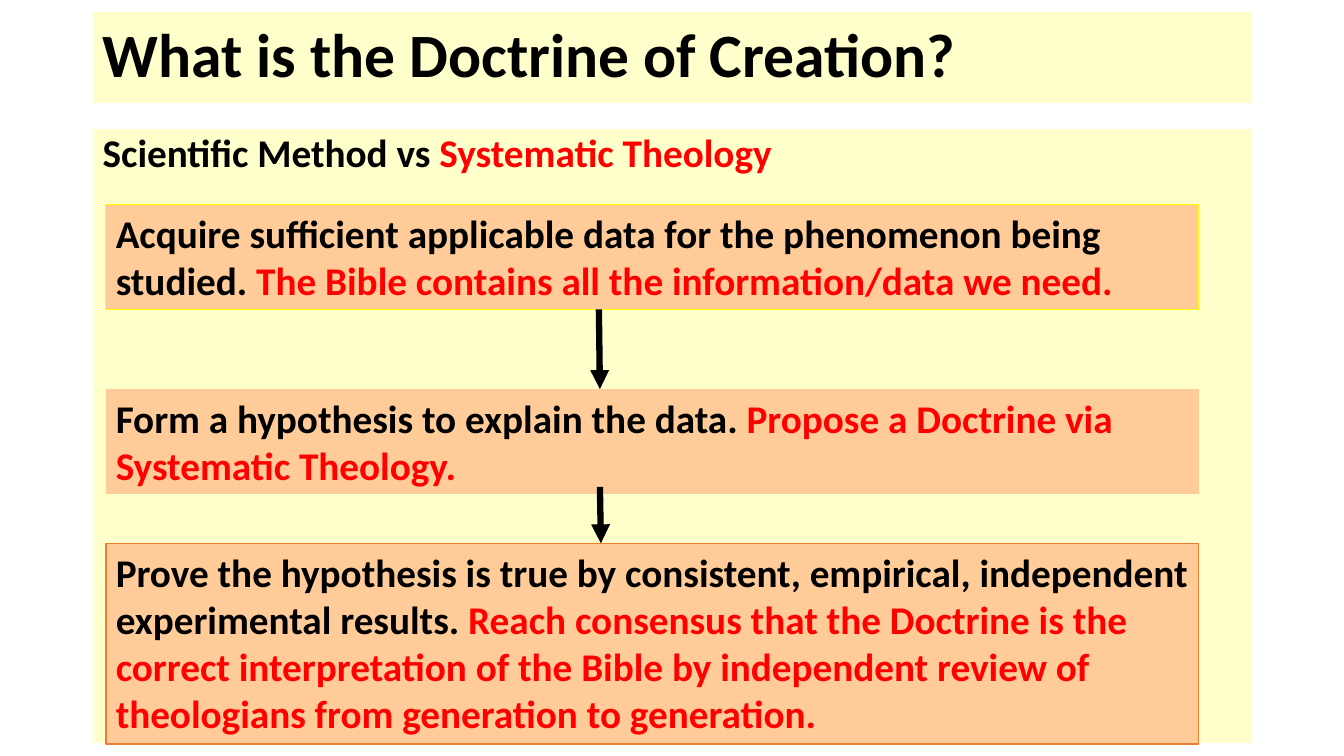
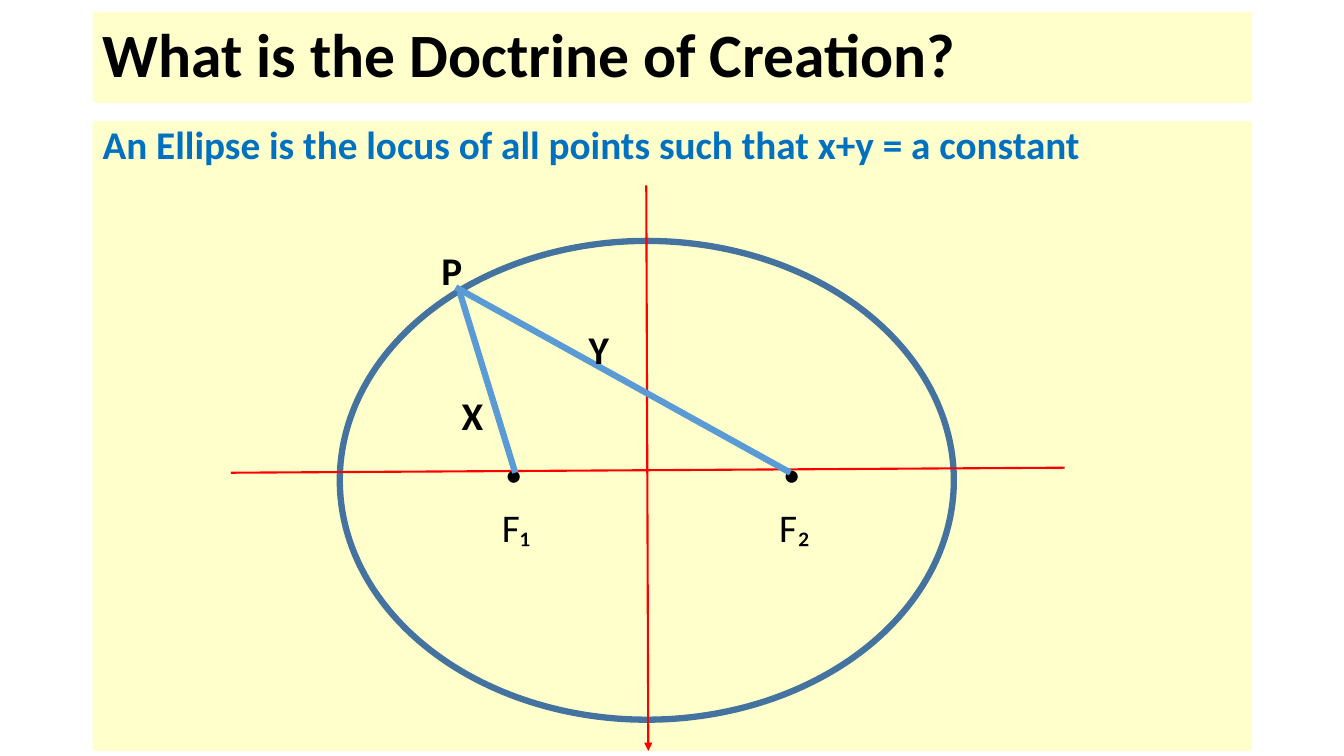
"""Build two slides on the doctrine of creation: a method flow and an ellipse."""
import lxml.etree
import pptx
import pptx.dml.color
import pptx.enum.shapes
import pptx.enum.text
import pptx.oxml.ns
import pptx.util

Inches = pptx.util.Inches
Pt = pptx.util.Pt
color = pptx.dml.color.RGBColor.from_string
qn = pptx.oxml.ns.qn
Shape = pptx.enum.shapes.MSO_SHAPE
Anchor = pptx.enum.text.MSO_ANCHOR

BLACK, RED, BLUE = "000000", "FF0000", "0070C0"
CREAM, PEACH, YELLOW, ORANGE = "FFFFCC", "FFCC99", "FFFF00", "ED7D31"
CURVE, RADIUS = "43739E", "5B9BD5"
PANEL_LEFT, PANEL_WIDTH = 0.92, 11.5
TITLE = "What is the Doctrine of Creation?"
BODY_FONT = {"name": "Calibri", "size": Pt(28), "bold": True}
TITLE_FONT = {**BODY_FONT, "size": Pt(44)}
LABEL_FONT = {**BODY_FONT, "bold": False}
POINT_FONT = {**LABEL_FONT, "size": Pt(72)}


def write(shape, paragraphs, spacing=1.0, anchor=Anchor.TOP, wrap=True):
    """Fill a shape with paragraphs of (text, colour, font) runs."""
    frame = shape.text_frame
    layout = {"word_wrap": wrap, "vertical_anchor": anchor,
              "auto_size": pptx.enum.text.MSO_AUTO_SIZE.NONE}
    for name, value in layout.items():
        setattr(frame, name, value)
    for index, runs in enumerate(paragraphs):
        paragraph = frame.add_paragraph() if index else frame.paragraphs[0]
        paragraph.alignment = pptx.enum.text.PP_ALIGN.LEFT
        paragraph.line_spacing = spacing
        for text, hue, font in runs:
            run = paragraph.add_run()
            run.text = text
            run.font.color.rgb = color(hue)
            for name, value in font.items():
                setattr(run.font, name, value)


def draw_line(slide, start, end, hue, weight, arrow=False):
    """Draw a straight line, with an arrowhead at its end if asked."""
    line = slide.shapes.add_connector(
        pptx.enum.shapes.MSO_CONNECTOR.STRAIGHT, *map(Inches, start + end))
    line.line.color.rgb = color(hue)
    line.line.width = Pt(weight)
    properties = line._element.spPr
    if arrow:
        lxml.etree.SubElement(properties.find(qn("a:ln")), qn("a:tailEnd"), type="triangle")
    lxml.etree.SubElement(properties, qn("a:effectLst"))


deck = pptx.Presentation()
deck.slide_width, deck.slide_height = Inches(13.33), Inches(7.5)

panels = [
    (1.28, 6.09, [("Scientific Method vs ", BLACK, BODY_FONT),
                  ("Systematic Theology", RED, BODY_FONT)]),
    (1.2, 6.25, [("An Ellipse is the locus of all points such that x+y = a constant",
                  BLUE, BODY_FONT)]),
]
for top, height, heading in panels:
    slide = deck.slides.add_slide(deck.slide_layouts[5])
    title = slide.shapes.title
    place = {"left": PANEL_LEFT, "top": 0.12, "width": PANEL_WIDTH, "height": 0.9}
    for name, value in place.items():
        setattr(title, name, Inches(value))
    panel = slide.shapes.add_textbox(*map(Inches, (PANEL_LEFT, top, PANEL_WIDTH, height)))
    for band in (title, panel):
        band.fill.solid()
        band.fill.fore_color.rgb = color(CREAM)
    write(title, [[(TITLE, BLACK, TITLE_FONT)]], 0.9, Anchor.MIDDLE)
    write(panel, [heading], 0.9)

method, ellipse = deck.slides

steps = [
    (2.03, 1.04, YELLOW, 0.75,
     "Acquire sufficient applicable data for the phenomenon being studied. ",
     "The Bible contains all the information/data we need."),
    (3.86, 1.04, None, 0,
     "Form a hypothesis to explain the data. ",
     "Propose a Doctrine via Systematic Theology."),
    (5.39, 1.99, ORANGE, 1,
     "Prove the hypothesis is true by consistent, empirical, independent experimental results. ",
     "Reach consensus that the Doctrine is the correct interpretation of the Bible "
     "by independent review of theologians from generation to generation."),
]
for top, height, border, weight, science, theology in steps:
    step = method.shapes.add_shape(
        Shape.RECTANGLE, *map(Inches, (1.05, top, 10.84, height)))
    step.shadow.inherit = False
    step.fill.solid()
    step.fill.fore_color.rgb = color(PEACH)
    if border:
        step.line.color.rgb = color(border)
        step.line.width = Pt(weight)
    else:
        step.line.fill.background()
    write(step, [[(science, BLACK, BODY_FONT), (theology, RED, BODY_FONT)]])

for start, end in [((5.94, 3.07), (5.95, 3.86)), ((5.95, 4.83), (5.96, 5.39))]:
    draw_line(method, start, end, BLACK, 4.5, arrow=True)

orbit = ellipse.shapes.add_shape(Shape.OVAL, *map(Inches, (3.37, 2.39, 6.09, 4.75)))
orbit.shadow.inherit = False
orbit.fill.background()
orbit.line.color.rgb = color(CURVE)
orbit.line.width = Pt(4.5)

draw_line(ellipse, (2.29, 4.69), (10.56, 4.64), RED, 1.5)
draw_line(ellipse, (6.41, 1.84), (6.43, 7.45), RED, 1.5, arrow=True)

for left, name in [(4.88, "F₁"), (7.63, "F₂")]:
    focus = ellipse.shapes.add_textbox(*map(Inches, (left, 3.74, 0.87, 1.78)))
    write(focus, [[(".", BLACK, POINT_FONT)], [(name, BLACK, LABEL_FONT)]])

for start, end in [((5.11, 4.69), (4.56, 2.9)), ((7.84, 4.69), (4.52, 2.85))]:
    draw_line(ellipse, start, end, RADIUS, 4.5)

for left, top, letter in [(4.28, 2.39, "P"), (4.48, 3.83, "X"), (5.74, 3.18, "Y")]:
    label = ellipse.shapes.add_textbox(*map(Inches, (left, top, 0.42, 0.57)))
    write(label, [[(letter, BLACK, BODY_FONT)]], wrap=False)

deck.save("out.pptx")
